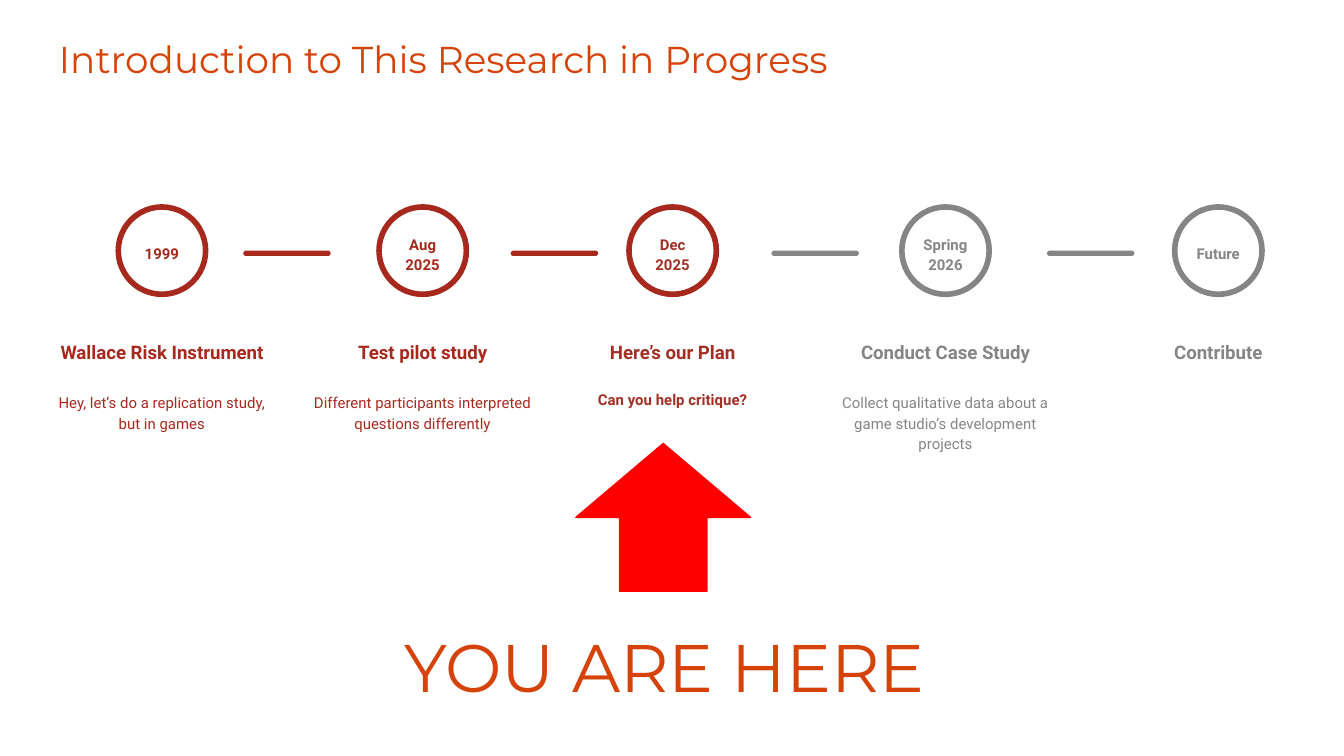
import pptx
import pptx.dml.color
import pptx.enum.shapes
import pptx.enum.text
import pptx.util

SHAPE = pptx.enum.shapes.MSO_SHAPE
ALIGN = pptx.enum.text.PP_ALIGN
ANCHOR = pptx.enum.text.MSO_ANCHOR

COLORS = {
    "title": "D64309",
    "done": "A7291E",
    "current": "A22F24",
    "future": "858585",
    "arrow": "FF0000",
}

# The slide is a grid of square units.
COLUMNS, ROWS = 100, 56.25
UNIT = pptx.util.Inches(10) / COLUMNS

MILESTONE_WIDTH, MILESTONE_TOP, MILESTONE_HEIGHT = 18.7, 15.4, 20.8
CIRCLE = 6.5
DATE_WIDTH = 5.6

# Centre column, date, date lines, heading, description, line colour, text colour
MILESTONES = [
    (12.05, "1999", 1, "Wallace Risk Instrument",
     "Hey, let’s do a replication study, but in games", "done", "done"),
    (31.45, "Aug 2025", 2, "Test pilot study",
     "Different participants interpreted questions differently", "done", "done"),
    (50.05, "Dec 2025", 2, "Here’s our Plan",
     "Can you help critique?", "done", "current"),
    (70.35, "Spring 2026", 2, "Conduct Case Study",
     "Collect qualitative data about a game studio’s development projects",
     "future", "future"),
    (90.65, "Future", 1, "Contribute", "", "future", "future"),
]
BARS = [(18.1, "done"), (38, "done"), (57.4, "future"), (77.9, "future")]


def units(*lengths):
    return [round(length * UNIT) for length in lengths]


def color(name):
    return pptx.dml.color.RGBColor.from_string(COLORS[name])


def add_text(shapes, box, text, size, color_name, font="Roboto", bold=False,
             align=ALIGN.CENTER, anchor=ANCHOR.TOP, spacing=1.15):
    text_box = shapes.add_textbox(*units(*box))
    frame = text_box.text_frame
    frame.word_wrap = True
    frame.vertical_anchor = anchor
    frame.margin_left = frame.margin_right = pptx.util.Inches(0.1)
    frame.margin_top = frame.margin_bottom = pptx.util.Inches(0.1)
    paragraph = frame.paragraphs[0]
    paragraph.text = text
    paragraph.alignment = align
    paragraph.line_spacing = spacing
    paragraph.font.name = font
    paragraph.font.size = pptx.util.Pt(size)
    paragraph.font.bold = bold
    paragraph.font.color.rgb = color(color_name)


def add_shape(shapes, kind, box, fill=None, line=None, line_width=0.75):
    shape = shapes.add_shape(kind, *units(*box))
    shape.shadow.inherit = False
    if fill:
        shape.fill.solid()
        shape.fill.fore_color.rgb = color(fill)
    else:
        shape.fill.background()
    if line:
        shape.line.color.rgb = color(line)
        shape.line.width = pptx.util.Pt(line_width)
    else:
        shape.line.fill.background()
    return shape


def add_milestone(slide, box, date, date_lines, heading, description,
                  line_color, text_color):
    """Place a dated circle over a heading and a description."""
    left, top, width, height = box
    center = left + width / 2
    shapes = slide.shapes.add_group_shape().shapes
    add_shape(shapes, SHAPE.OVAL, (center - CIRCLE / 2, top, CIRCLE, CIRCLE),
              line=line_color, line_width=3)
    date_top = top + (1.8 if date_lines == 1 else 0.9)
    add_text(shapes, (center - DATE_WIDTH / 2, date_top, DATE_WIDTH, 4.3),
             date, 8, text_color, bold=True)
    add_text(shapes, (left, top + 7.7, width, 4.9), heading, 10, text_color,
             bold=True, anchor=ANCHOR.BOTTOM)
    if description:
        add_text(shapes, (left, top + 12.7, width, height - 12.7), description,
                 8, text_color, bold=text_color == "current")


def add_timeline(slide, top, height):
    for center, *details in MILESTONES:
        box = (center - MILESTONE_WIDTH / 2, top, MILESTONE_WIDTH, height)
        add_milestone(slide, box, *details)
    for left, fill in BARS:
        bar = add_shape(slide.shapes, SHAPE.ROUNDED_RECTANGLE,
                        (left, top + CIRCLE / 2, 6.5, 0.4), fill=fill)
        bar.adjustments[0] = 0.5


def add_position_marker(slide, box):
    """Place an up arrow above a large caption."""
    left, top, width, height = box
    add_shape(slide.shapes, SHAPE.UP_ARROW,
              (left + (width - 13) / 2 - 0.1, top, 13, 11),
              fill="arrow", line="arrow")
    add_text(slide.shapes, (left, top + 12.5, width, height - 12.5),
             "YOU ARE HERE", 36, "title", font="Montserrat", spacing=1)


def main():
    presentation = pptx.Presentation()
    presentation.slide_width, presentation.slide_height = units(COLUMNS, ROWS)
    slide = presentation.slides.add_slide(presentation.slide_layouts[6])
    add_text(slide.shapes, (3.4, 1.7, COLUMNS - 2 * 3.4, 6.3),
             "Introduction to This Research in Progress", 20, "title",
             font="Montserrat", align=ALIGN.LEFT, spacing=1)
    add_timeline(slide, MILESTONE_TOP, MILESTONE_HEIGHT)
    add_position_marker(slide, (28.3, 33, 42.3, 21.4))
    presentation.save("out.pptx")


if __name__ == "__main__":
    main()
